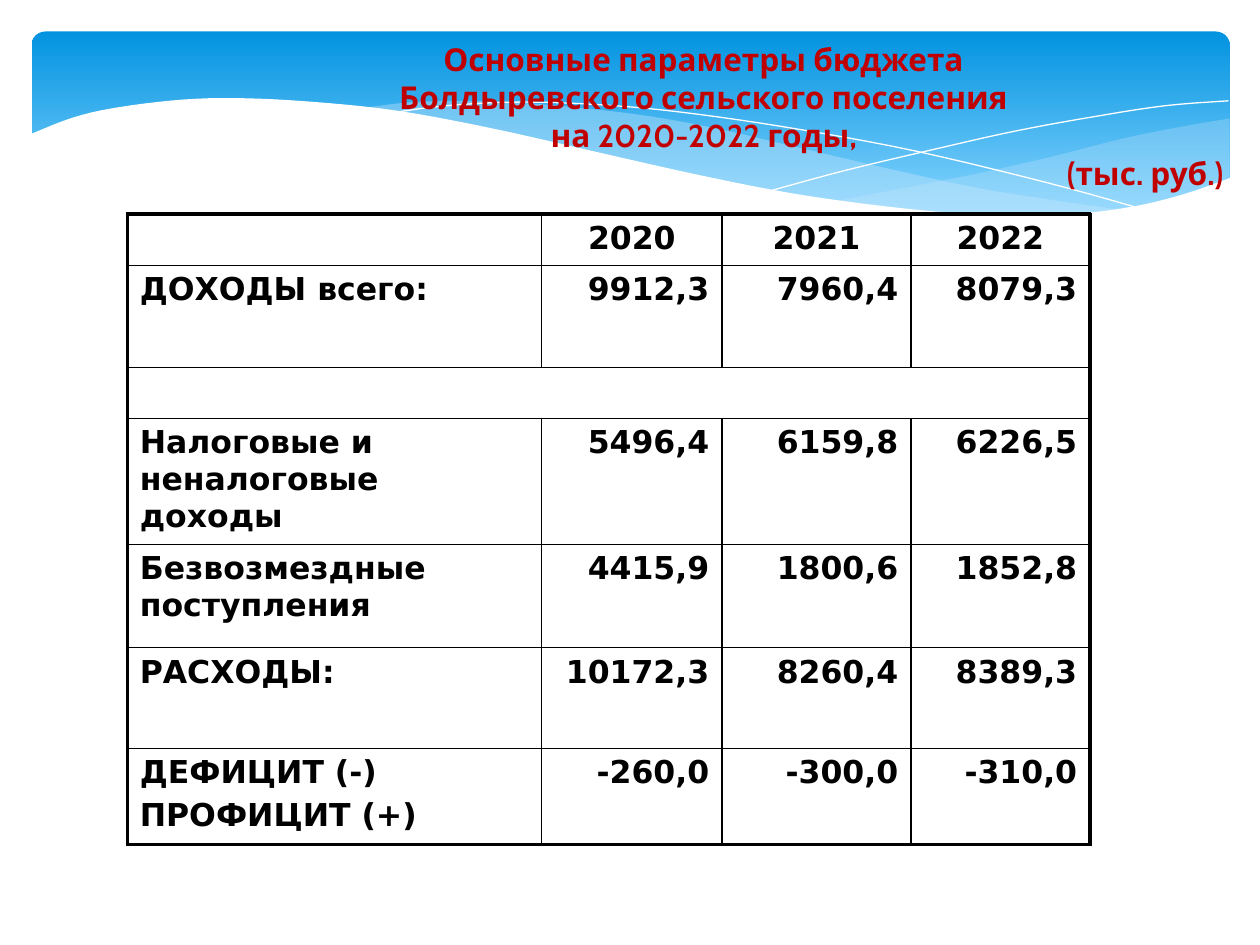
from pptx import Presentation
from pptx.dml.color import RGBColor
from pptx.enum.shapes import MSO_SHAPE
from pptx.enum.text import MSO_ANCHOR, PP_ALIGN
from pptx.oxml.ns import qn
from pptx.util import Inches, Pt
from lxml import etree

LEFT, CENTER, RIGHT = PP_ALIGN.LEFT, PP_ALIGN.CENTER, PP_ALIGN.RIGHT
TOP = MSO_ANCHOR.TOP
ROUNDED = MSO_SHAPE.ROUNDED_RECTANGLE

BLACK = RGBColor(0x00, 0x00, 0x00)
WHITE = RGBColor(0xFF, 0xFF, 0xFF)
RED = RGBColor(0xC0, 0x00, 0x00)
DEEP_BLUE = RGBColor(0x02, 0x93, 0xE0)
SKY_BLUE = RGBColor(0x83, 0xD3, 0xFE)
PALE_BLUE = RGBColor(0xC6, 0xE7, 0xFC)

OUTER, INNER = Pt(2.25), Pt(1)
RIGHT_INDENT = Inches(0.29)

# Each outline is a list of curves; a two-point curve is a straight edge.
RIGHT_WAVE = [
    [(9.76, 0.94), (9.35, 1.01), (8.91, 1.1), (8.32, 1.25), (7.79, 1.37), (7.29, 1.47), (6.61, 1.6)],
    [(6.61, 1.6), (7.05, 1.65), (7.57, 1.7), (8.14, 1.72), (8.63, 1.7), (9.05, 1.63), (9.42, 1.54), (9.76, 1.41)],
]
MIDDLE_WAVE = [
    [(8.93, 1.67), (8.37, 1.59), (7.75, 1.49), (7.06, 1.34), (6.29, 1.16), (5.69, 1.02), (5.14, 0.92),
     (4.65, 0.86), (4.2, 0.82), (3.8, 0.8), (3.28, 0.81), (2.86, 0.86)],
    [(2.86, 0.86), (3.42, 0.94), (4.04, 1.06), (4.91, 1.26), (5.66, 1.43), (6.34, 1.56), (6.95, 1.65),
     (7.48, 1.7), (8.07, 1.73), (8.48, 1.72), (8.93, 1.67)],
]
FALLING_LINE = [[(3.09, 0.9), (3.53, 0.84), (4.16, 0.81), (4.89, 0.84), (5.56, 0.91), (6.36, 1.03),
                 (7.27, 1.2), (8.31, 1.45), (9.07, 1.66)]]
RISING_LINE = [[(6.13, 1.51), (6.72, 1.35), (7.48, 1.17), (8.06, 1.04), (8.66, 0.93), (9.24, 0.84), (9.75, 0.8)]]
WHITE_WAVE = [
    [(9.77, 1.41), (9.4, 1.54), (8.99, 1.64), (8.5, 1.7), (7.93, 1.71), (7.44, 1.68), (6.88, 1.62),
     (6.26, 1.53), (5.55, 1.39), (4.75, 1.21), (3.91, 1.02), (3.16, 0.88), (2.5, 0.81), (1.93, 0.78),
     (1.46, 0.79), (0.95, 0.85), (0.59, 0.93), (0.23, 1.07)],
    [(0.23, 1.07), (0.23, 2.24)],
    [(0.23, 2.24), (9.77, 2.24)],
]

TITLE = [
    ("Основные параметры бюджета", CENTER),
    ("Болдыревского сельского поселения", CENTER),
    ("на 2020-2022 годы,", CENTER),
    ("(тыс. руб.)", RIGHT),
]
BUDGET = [
    ("", "2020", "2021", "2022"),
    ("ДОХОДЫ всего:", "9912,3", "7960,4", "8079,3"),
    ("", "", "", ""),
    ("Налоговые и неналоговые доходы", "5496,4", "6159,8", "6226,5"),
    ("Безвозмездные поступления", "4415,9", "1800,6", "1852,8"),
    ("РАСХОДЫ:", "10172,3", "8260,4", "8389,3"),
    ("ДЕФИЦИТ (-)\nПРОФИЦИТ (+)", "-260,0", "-300,0", "-310,0"),
]
COLUMN_WIDTHS = [3.29, 1.43, 1.5, 1.42]
ROW_HEIGHTS = [0.4, 0.81, 0.4, 1.0, 0.82, 0.8, 0.76]
SEPARATOR_ROW = 2


def smooth(knots, steps=5):
    """Return points of a Catmull-Rom curve through the knots."""
    if len(knots) == 2:
        return knots
    padded = [knots[0], *knots, knots[-1]]
    points = [knots[0]]
    for a, b, c, d in zip(padded, padded[1:], padded[2:], padded[3:]):
        for step in range(1, steps + 1):
            t = step / steps
            points.append(tuple(
                (2 * q + (r - p) * t + (2 * p - 5 * q + 4 * r - s) * t ** 2
                 + (3 * q - p - 3 * r + s) * t ** 3) / 2
                for p, q, r, s in zip(a, b, c, d)))
    return points


def write(paragraph, text, font="DejaVu Sans", color=BLACK, align=LEFT, before=0):
    paragraph.alignment = align
    paragraph.space_before = Pt(before)
    run = paragraph.add_run()
    run.text = text
    run.font.name, run.font.size, run.font.bold = font, Pt(18), True
    run.font.color.rgb = color


def draw_border(cell, side, width):
    edge = etree.SubElement(cell._tc.get_or_add_tcPr(), qn(f"a:ln{side}"), w=str(width))
    fill = etree.SubElement(edge, qn("a:solidFill"))
    etree.SubElement(fill, qn("a:srgbClr"), val=str(BLACK))


class BudgetSlide:
    def __init__(self, presentation):
        self.slide = presentation.slides.add_slide(presentation.slide_layouts[5])
        self.shapes = self.slide.shapes

    def banner(self, left, top, width, height):
        banner = self.shapes.add_shape(ROUNDED, Inches(left), Inches(top), Inches(width), Inches(height))
        banner.shadow.inherit = False
        banner.adjustments[0] = 0.071
        banner.line.fill.background()
        banner.fill.gradient()
        banner.fill.gradient_angle = 270
        for stop, color, position in zip(banner.fill.gradient_stops, (DEEP_BLUE, SKY_BLUE), (0, 0.9)):
            stop.color.rgb, stop.position = color, position

    def outline(self, curves, closed):
        points = [(Inches(x), Inches(y)) for curve in curves for x, y in smooth(curve)]
        builder = self.shapes.build_freeform(*points[0])
        builder.add_line_segments(points[1:], close=closed)
        shape = builder.convert_to_shape()
        shape.shadow.inherit = False
        return shape

    def wave(self, curves, color, opacity=100):
        wave = self.outline(curves, closed=True)
        wave.line.fill.background()
        wave.fill.solid()
        wave.fill.fore_color.rgb = color
        if opacity < 100:
            tint = wave._element.spPr.find(f".//{qn('a:srgbClr')}")
            etree.SubElement(tint, qn("a:alpha"), val=str(opacity * 1000))

    def thin_curve(self, curves):
        curve = self.outline(curves, closed=False)
        curve.fill.background()
        curve.line.color.rgb = WHITE
        curve.line.width = Pt(0)

    def title(self, lines, left, top, width, height):
        title = self.shapes.title
        title.left, title.top, title.width, title.height = map(Inches, (left, top, width, height))
        title._element.getparent().append(title._element)  # in front of the banner
        frame = title.text_frame
        frame.margin_left = frame.margin_top = frame.margin_right = frame.margin_bottom = 0
        frame.vertical_anchor, frame.word_wrap = TOP, True
        for index, (text, align) in enumerate(lines):
            paragraph = frame.add_paragraph() if index else frame.paragraphs[0]
            write(paragraph, text, font="Cabin", color=RED, align=align)
            if align == RIGHT:
                paragraph._p.get_or_add_pPr().set("marR", str(RIGHT_INDENT))

    def table(self, rows, left, top):
        frame = self.shapes.add_table(len(rows), len(COLUMN_WIDTHS), Inches(left), Inches(top),
                                      Inches(sum(COLUMN_WIDTHS)), Inches(sum(ROW_HEIGHTS)))
        table = frame.table
        table.first_row = table.horz_banding = False
        for column, width in zip(table.columns, COLUMN_WIDTHS):
            column.width = Inches(width)
        for row, height in zip(table.rows, ROW_HEIGHTS):
            row.height = Inches(height)
        last_row, last_column = len(rows) - 1, len(COLUMN_WIDTHS) - 1
        table.cell(SEPARATOR_ROW, 0).merge(table.cell(SEPARATOR_ROW, last_column))
        for r, values in enumerate(rows):
            for c, value in enumerate(values):
                cell = table.cell(r, c)
                at_right = c == last_column or cell.is_merge_origin
                if not cell.is_spanned:
                    draw_border(cell, "L", INNER if c else OUTER)
                if at_right or not cell.is_spanned:
                    draw_border(cell, "R", OUTER if at_right else INNER)
                draw_border(cell, "T", INNER if r else OUTER)
                draw_border(cell, "B", OUTER if r == last_row else INNER)
                cell.fill.background()
                if value:
                    align = LEFT if c == 0 else RIGHT if r else CENTER
                    for index, line in enumerate(value.split("\n")):
                        text = cell.text_frame
                        paragraph = text.add_paragraph() if index else text.paragraphs[0]
                        write(paragraph, line, align=align, before=3.6)


def main():
    presentation = Presentation()
    presentation.slide_width, presentation.slide_height = Inches(10), Inches(7.5)
    budget = BudgetSlide(presentation)
    budget.banner(0.25, 0.25, 9.51, 1.56)
    budget.wave(RIGHT_WAVE, PALE_BLUE, opacity=29)
    budget.wave(MIDDLE_WAVE, PALE_BLUE, opacity=40)
    budget.thin_curve(FALLING_LINE)
    budget.thin_curve(RISING_LINE)
    budget.wave(WHITE_WAVE, WHITE)
    budget.title(TITLE, 1.17, 0.32, 8.83, 1.51)
    budget.table(BUDGET, 1.01, 1.7)
    presentation.save("out.pptx")


if __name__ == "__main__":
    main()
